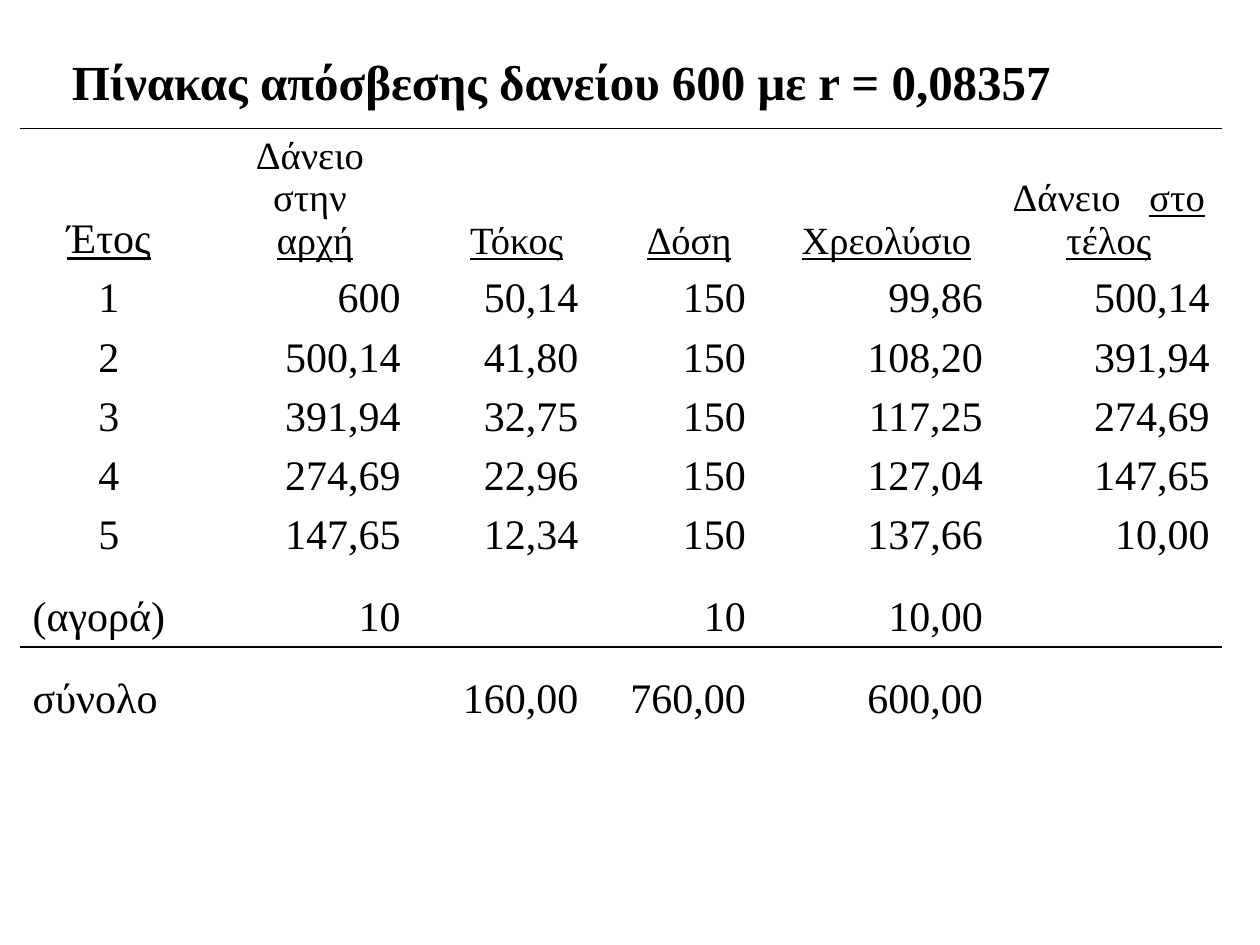
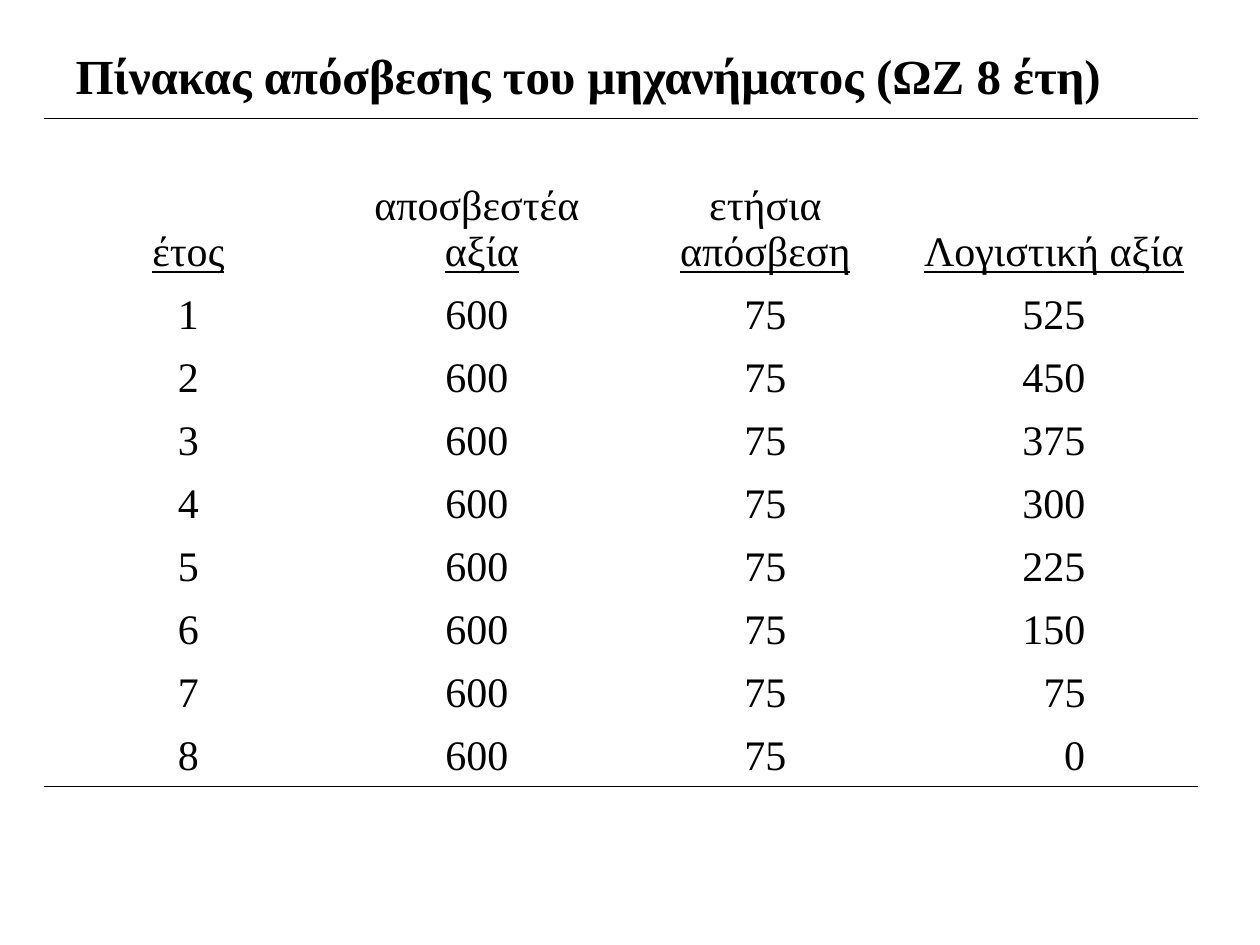
from dataclasses import dataclass
from typing import Any, NamedTuple

from lxml.etree import SubElement
from pptx import Presentation
from pptx.dml.color import RGBColor
from pptx.enum.text import MSO_ANCHOR, MSO_AUTO_SIZE, PP_ALIGN
from pptx.oxml.ns import qn
from pptx.util import Inches, Pt

INK = RGBColor(0x00, 0x00, 0x00)
PAPER = RGBColor(0xFF, 0xFF, 0xFF)
FACE = "Times New Roman"
PLAIN = "{2D5ABB26-0587-4C30-8999-92F81FD0307C}"
LEFT, MID, RIGHT = PP_ALIGN.LEFT, PP_ALIGN.CENTER, PP_ALIGN.RIGHT

TITLE = {"name": FACE, "size": Pt(28), "bold": True}
FRAME = {
    "margin_top": Inches(0.1),
    "word_wrap": True,
    "auto_size": MSO_AUTO_SIZE.NONE,
    "vertical_anchor": MSO_ANCHOR.TOP,
}
FLAGS = {"first_row": False, "horz_banding": False}


class Line(NamedTuple):
    text: str = ""
    under: str = ""
    lead: float = 0
    size: int = 24
    spread: int = 0


class Box(NamedTuple):
    left: float
    top: float
    width: float
    height: float

    def place(self) -> tuple[int, ...]:
        return tuple(Inches(side) for side in self)


@dataclass
class Sheet:
    title: str
    head: Box
    leading: float
    grid: Box
    cols: list[float]
    rows: list[float]
    heads: list[list[Line]]
    body: list[list[str | Line]]
    align: PP_ALIGN
    rules: list[tuple[int, str]]


def style(target: Any, looks: dict[str, Any]) -> None:
    for name, value in looks.items():
        setattr(target, name, value)


def paint(font: Any, looks: dict[str, Any]) -> None:
    style(font, looks)
    font.color.rgb = INK


def write(para: Any, line: Line, align: PP_ALIGN) -> None:
    para.alignment = align
    if line.lead:
        para._p.get_or_add_pPr().set("marL", str(Inches(line.lead)))
    gap = " " if line.text and line.under else ""
    for text in filter(None, (line.text, gap, line.under)):
        run = para.add_run()
        run.text = text
        looks = {"name": FACE, "size": Pt(line.size), "underline": text == line.under}
        paint(run.font, looks)
        if text == gap and line.spread:
            run._r.get_or_add_rPr().set("spc", str(line.spread * 100))


def fill(cell: Any, lines: list[Line], align: PP_ALIGN) -> None:
    cell.vertical_anchor = MSO_ANCHOR.BOTTOM
    cell.fill.solid()
    cell.fill.fore_color.rgb = PAPER
    frame = cell.text_frame
    for spot, line in enumerate(lines):
        para = frame.add_paragraph() if spot else frame.paragraphs[0]
        write(para, line, align)


def rule(cell: Any, side: str) -> None:
    props = cell._tc.get_or_add_tcPr()
    edge = SubElement(props, qn(f"a:ln{side}"), w=str(Pt(1)))
    solid = SubElement(edge, qn("a:solidFill"))
    SubElement(solid, qn("a:srgbClr"), val=str(INK))
    props.insert(0, edge)


def draw_title(slide: Any, sheet: Sheet) -> None:
    title = slide.shapes.title
    title.left, title.top, title.width, title.height = sheet.head.place()
    style(title.text_frame, FRAME)
    para = title.text_frame.paragraphs[0]
    style(para, {"alignment": LEFT, "line_spacing": sheet.leading, "space_before": Pt(0)})
    run = para.add_run()
    run.text = sheet.title
    paint(run.font, TITLE)


def draw_table(slide: Any, sheet: Sheet) -> None:
    shape = slide.shapes.add_table(len(sheet.rows), len(sheet.cols), *sheet.grid.place())
    table = shape.table
    style(table, FLAGS)
    table._tbl.tblPr.find(qn("a:tableStyleId")).text = PLAIN
    for col, width in zip(table.columns, sheet.cols):
        col.width = Inches(width)
    for row, height in zip(table.rows, sheet.rows):
        row.height = Inches(height)
    for col, lines in enumerate(sheet.heads):
        fill(table.cell(0, col), lines, MID)
    for row, values in enumerate(sheet.body, 1):
        for col, value in enumerate(values):
            line = value if isinstance(value, Line) else Line(value)
            label = MID if line.text.isdigit() else LEFT
            fill(table.cell(row, col), [line], sheet.align if col else label)
    for row, side in sheet.rules:
        for cell in table.rows[row].cells:
            rule(cell, side)


LOAN = Sheet(
    title="Πίνακας απόσβεσης δανείου 600 με r = 0,08357",
    head=Box(0.47, 0.31, 8.99, 0.69),
    leading=1.0,
    grid=Box(0.16, 1.02, 9.53, 4.99),
    cols=[1.41, 1.71, 1.41, 1.33, 1.88, 1.8],
    rows=[1.03] + [0.47] * 5 + [0.65] * 2,
    heads=[
        [Line(under="Έτος")],
        [
            Line("Δάνειο", lead=0.07, size=22),
            Line("στην", lead=0.07, size=22),
            Line(under="αρχή", lead=0.15, size=22),
        ],
        [Line(under="Τόκος", lead=0.23, size=22)],
        [Line(under="Δόση", lead=0.23, size=22)],
        [Line(under="Χρεολύσιο", lead=0.15, size=22)],
        [Line("Δάνειο", "στο τέλος", size=22, spread=11)],
    ],
    body=[
        ["1", "600", "50,14", "150", "99,86", "500,14"],
        ["2", "500,14", "41,80", "150", "108,20", "391,94"],
        ["3", "391,94", "32,75", "150", "117,25", "274,69"],
        ["4", "274,69", "22,96", "150", "127,04", "147,65"],
        ["5", "147,65", "12,34", "150", "137,66", "10,00"],
        ["(αγορά)", "10", "", "10", "10,00", ""],
        ["σύνολο", "", "160,00", "760,00", "600,00", ""],
    ],
    align=RIGHT,
    rules=[(0, "T"), (6, "B"), (7, "T")],
)

LEADS = {75: 0.17, 0: 0.33}

ASSET = Sheet(
    title="Πίνακας απόσβεσης του μηχανήματος (ΩΖ 8 έτη)",
    head=Box(0.5, 0.31, 8.99, 0.55),
    leading=0.9,
    grid=Box(0.35, 0.94, 9.15, 5.3),
    cols=[2.29] * 4,
    rows=[1.3] + [0.5] * 8,
    heads=[
        [Line(under="έτος")],
        [Line("αποσβεστέα"), Line(under="αξία", lead=0.08)],
        [Line("ετήσια", "απόσβεση")],
        [Line(under="Λογιστική αξία")],
    ],
    body=[
        [str(year), "600", "75", Line(str(worth), lead=LEADS.get(worth, 0))]
        for year, worth in enumerate(range(525, -1, -75), 1)
    ],
    align=MID,
    rules=[(0, "T"), (8, "B")],
)


def main() -> None:
    deck = Presentation()
    style(deck, {"slide_width": Inches(10), "slide_height": Inches(7.5)})
    for sheet in (LOAN, ASSET):
        slide = deck.slides.add_slide(deck.slide_layouts[5])
        draw_title(slide, sheet)
        draw_table(slide, sheet)
    deck.save("out.pptx")


if __name__ == "__main__":
    main()
